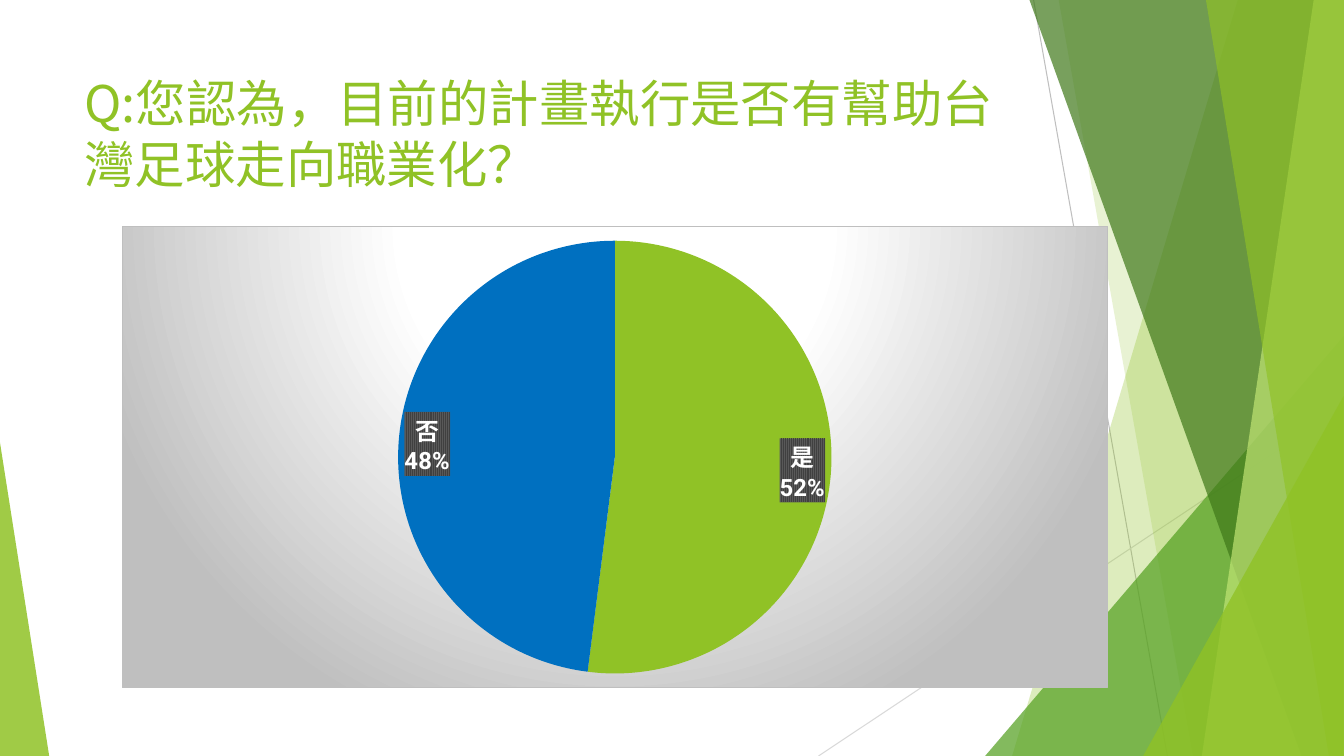
from dataclasses import dataclass

from lxml import etree
from pptx import Presentation
from pptx import util as u
from pptx.chart import data as cd
from pptx.dml import color as dc
from pptx.enum import chart as ch
from pptx.enum import shapes as sh
from pptx.enum import text as tx
from pptx.oxml import ns
from pptx.oxml import parse_xml

WIDE, HIGH, TOP = 33.86, 19.05, -0.02


@dataclass(frozen=True)
class Theme:
    lime: str = "90C226"
    green: str = "54A021"
    moss: str = "3F7819"
    pale: str = "C0E474"
    blue: str = "0070C0"
    white: str = "FFFFFF"
    mist: str = "D9D9D9"
    gray: str = "BFBFBF"
    dark: str = "404040"
    slate: str = "595959"
    han: str = "Noto Sans CJK SC"
    latin: str = "Roboto"
    head: float = 36
    label: float = 17
    body: float = 10
    rule: float = 0.75


@dataclass(frozen=True)
class Line:
    x1: float
    y1: float
    x2: float
    y2: float
    color: str


@dataclass(frozen=True)
class Slab:
    upper: float
    lower: float
    color: str
    alpha: int


@dataclass(frozen=True)
class Wedge:
    left: float
    top: float
    width: float
    height: float
    tip: float
    color: str
    alpha: int


@dataclass(frozen=True)
class Answer:
    name: str
    share: int
    color: str


THEME = Theme()
LINES = [
    Line(26.04, 0, 29.41, HIGH, THEME.gray),
    Line(WIDE, 10.24, 20.62, HIGH, THEME.mist),
]
FACETS = [
    Slab(31.19, 25.5, THEME.lime, 30),
    Slab(26.67, 30.05, THEME.lime, 20),
    Wedge(24.82, 8.46, 9.04, 10.59, 1, THEME.green, 72),
    Slab(25.93, 32.79, THEME.moss, 70),
    Slab(33.1, 30.28, THEME.pale, 70),
    Slab(30.38, 33.48, THEME.lime, 65),
    Wedge(28.8, 9.98, 5.05, 9.07, 1, THEME.lime, 80),
    Wedge(0, 11.15, 1.24, 7.9, 0, THEME.lime, 85),
]
ANSWERS = [Answer("是", 52, THEME.lime), Answer("否", 48, THEME.blue)]


def rgb(code: str) -> dc.RGBColor:
    return dc.RGBColor.from_string(code)


def solid(code: str) -> str:
    return f'<a:srgbClr val="{code}"/>'


def draw_line(slide, line: Line) -> None:
    ends = [u.Cm(v) for v in (line.x1, line.y1, line.x2, line.y2)]
    rule = slide.shapes.add_connector(sh.MSO_CONNECTOR.STRAIGHT, *ends)
    rule.line.color.rgb = rgb(line.color)
    rule.line.width = u.Pt(THEME.rule)
    etree.SubElement(rule._element.spPr, ns.qn("a:effectLst"))


def draw_facet(slide, facet: Slab | Wedge) -> None:
    if isinstance(facet, Slab):
        pen = slide.shapes.build_freeform(u.Cm(facet.upper), u.Cm(TOP))
        turns = [(WIDE, TOP), (WIDE, HIGH), (facet.lower, HIGH)]
        pen.add_line_segments([(u.Cm(x), u.Cm(y)) for x, y in turns])
        shape = pen.convert_to_shape()
    else:
        box = (facet.left, facet.top, facet.width, facet.height)
        shape = slide.shapes.add_shape(
            sh.MSO_SHAPE.ISOSCELES_TRIANGLE, *map(u.Cm, box))
        shape.adjustments[0] = facet.tip
    shape.shadow.inherit = False
    shape.line.fill.background()
    shape.fill.solid()
    shape.fill.fore_color.rgb = rgb(facet.color)
    tint = shape._element.spPr.find(".//" + ns.qn("a:srgbClr"))
    etree.SubElement(tint, ns.qn("a:alpha"), val=str(facet.alpha * 1000))


def draw_title(slide, words: str) -> None:
    box = slide.shapes.add_textbox(*map(u.Cm, (1.88, 1.7, 23.88, 3.66)))
    frame = box.text_frame
    frame.word_wrap = True
    frame.vertical_anchor = tx.MSO_ANCHOR.TOP
    run = frame.paragraphs[0].add_run()
    run.text = words
    run.font.size = u.Pt(THEME.head)
    run.font.name = THEME.han
    run.font.color.rgb = rgb(THEME.lime)
    etree.SubElement(run.font._element, ns.qn("a:ea"), typeface=THEME.han)


def draw_pie(slide, answers: list[Answer]) -> None:
    data = cd.CategoryChartData()
    data.categories = [a.name for a in answers]
    data.add_series("Series 1", [a.share for a in answers])
    place = map(u.Cm, (3.07, 5.69, 24.84, 11.66))
    chart = slide.shapes.add_chart(ch.XL_CHART_TYPE.PIE, *place, data).chart
    chart.has_title = False
    chart.has_legend = False
    chart.font.size = u.Pt(THEME.body)
    chart.font.name = THEME.latin
    plot = chart.plots[0]
    plot.vary_by_categories = True
    series = plot.series[0]
    for i, answer in enumerate(answers):
        fill = series.points[i].format.fill
        fill.solid()
        fill.fore_color.rgb = rgb(answer.color)

    tags = series.data_labels
    tags.show_percentage = True
    tags.show_category_name = True
    tags.show_value = False
    tags.position = ch.XL_LABEL_POSITION.INSIDE_END
    tags.font.size = u.Pt(THEME.label)
    tags.font.bold = True
    tags.font.name = THEME.latin
    tags.font.color.rgb = rgb(THEME.white)
    etree.SubElement(tags.font._element, ns.qn("a:ea"), typeface=THEME.han)
    tags._element.find(ns.qn("c:txPr")).addprevious(parse_xml(
        f'<c:spPr {ns.nsdecls("c", "a")}><a:pattFill prst="narVert">'
        f'<a:fgClr>{solid(THEME.dark)}</a:fgClr>'
        f'<a:bgClr>{solid(THEME.slate)}</a:bgClr></a:pattFill></c:spPr>'))

    stops = [(0, THEME.white), (39, THEME.white), (100, THEME.gray)]
    steps = "".join(
        f'<a:gs pos="{at * 1000}">{solid(code)}</a:gs>' for at, code in stops)
    root = chart._chartSpace
    root.find(ns.qn("c:chart")).addnext(parse_xml(
        f'<c:spPr {ns.nsdecls("c", "a")}><a:gradFill><a:gsLst>{steps}</a:gsLst>'
        '<a:path path="circle"><a:fillToRect l="50000" t="-80000" '
        'r="50000" b="180000"/></a:path></a:gradFill>'
        f'<a:ln w="{u.Pt(THEME.rule)}"><a:solidFill>{solid(THEME.gray)}'
        '</a:solidFill></a:ln></c:spPr>'))

    area = root.find(".//" + ns.qn("c:plotArea"))
    for old in area.findall(ns.qn("c:layout")):
        area.remove(old)
    spots = [("layoutTarget", "inner"), ("xMode", "edge"), ("yMode", "edge"),
             ("x", 0.28), ("y", 0.03), ("w", 0.44), ("h", 0.94)]
    marks = "".join(f'<c:{key} val="{val}"/>' for key, val in spots)
    area.insert(0, parse_xml(
        f'<c:layout {ns.nsdecls("c")}><c:manualLayout>{marks}'
        '</c:manualLayout></c:layout>'))


def main() -> None:
    deck = Presentation()
    deck.slide_width, deck.slide_height = u.Cm(WIDE), u.Cm(HIGH)
    slide = deck.slides.add_slide(deck.slide_layouts[6])
    for line in LINES:
        draw_line(slide, line)
    for facet in FACETS:
        draw_facet(slide, facet)
    draw_title(slide, "Q:您認為，目前的計畫執行是否有幫助台灣足球走向職業化？")
    draw_pie(slide, ANSWERS)
    deck.save("out.pptx")


if __name__ == "__main__":
    main()
